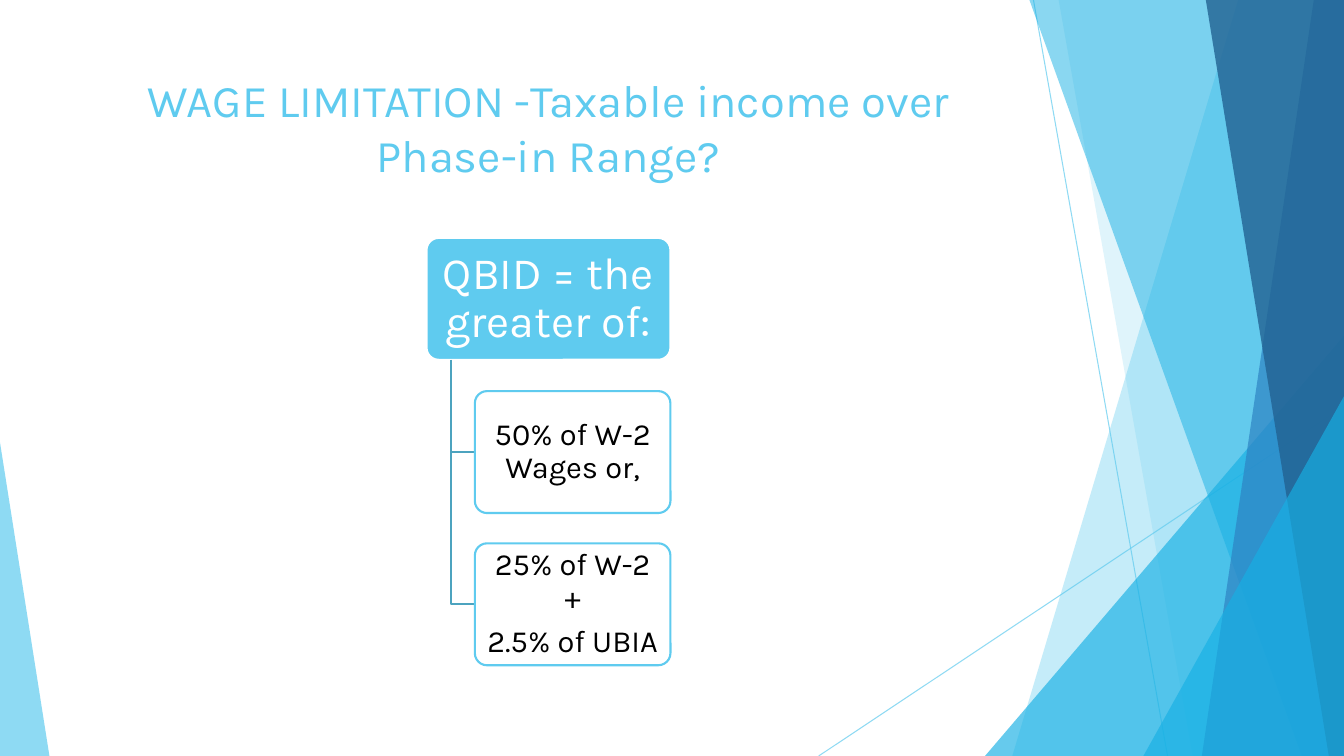
from lxml import etree
from pptx import Presentation
from pptx.dml.color import RGBColor
from pptx.enum.shapes import MSO_CONNECTOR as CONNECTOR, MSO_SHAPE as SHAPE
from pptx.enum.text import MSO_ANCHOR as ANCHOR, PP_ALIGN as ALIGN
from pptx.oxml.ns import qn
from pptx.util import Pt

PX = 9144
WIDTH, HEIGHT = 1333, 750
FONT = "Karla"
WHITE = RGBColor(0xFF, 0xFF, 0xFF)
BLACK = RGBColor(0, 0, 0)
SKY = RGBColor(0x5F, 0xCB, 0xEF)
CYAN = RGBColor(0x17, 0xB0, 0xE4)
BLUE = RGBColor(0x2E, 0x83, 0xC3)
NAVY = RGBColor(0x22, 0x62, 0x92)
TEAL = RGBColor(0x4C, 0xA3, 0xBF)

RAYS = [((1025, 0), (1158, HEIGHT)), ((WIDTH, 403), (812, HEIGHT))]
BANDS_BEHIND = [(1228, 1004, SKY, 36), (1050, 1183, SKY, 20)]
BANDS_FRONT = [(1021, 1291, CYAN, 50), (1303, 1192, BLUE, 70), (1196, 1318, NAVY, 80)]

PARENT_BOX = (423, 236, 242, 121)
CHILD_LEFT, CHILD_TOP, CHILD_STEP = 471, 388, 151
CHILD_WIDTH, CHILD_HEIGHT = 194, 121
TRUNK_X = 447
CHILD_TEXTS = [["50% of W-2 Wages or,"], ["25% of W-2 +", "2.5% of UBIA"]]


def emu(*lengths):
    return [length * PX for length in lengths]


def set_alpha(color_format_owner, percent):
    color = color_format_owner._xPr.find(".//" + qn("a:srgbClr"))
    etree.SubElement(color, qn("a:alpha")).set("val", str(percent * 1000))


def paint(shape, color, percent=100):
    shape.shadow.inherit = False
    shape.fill.solid()
    shape.fill.fore_color.rgb = color
    if percent < 100:
        set_alpha(shape.fill, percent)
    shape.line.fill.background()


def add_ray(slide, start, end):
    ray = slide.shapes.add_connector(CONNECTOR.STRAIGHT, *emu(*start, *end))
    ray.line.color.rgb = SKY
    ray.line.width = Pt(0.75)
    set_alpha(ray.line.fill, 70)
    etree.SubElement(ray._element.spPr, qn("a:effectLst"))


def add_path(slide, points, close):
    builder = slide.shapes.build_freeform(*points[0], scale=PX)
    builder.add_line_segments(points[1:], close=close)
    return builder.convert_to_shape()


def add_band(slide, top_x, bottom_x, color, percent):
    corners = [(top_x, 0), (WIDTH, 0), (WIDTH, HEIGHT), (bottom_x, HEIGHT)]
    paint(add_path(slide, corners, True), color, percent)


def add_triangle(slide, left, top, width, apex, color, percent):
    triangle = slide.shapes.add_shape(
        SHAPE.ISOSCELES_TRIANGLE, *emu(left, top, width, HEIGHT - top))
    triangle.adjustments[0] = apex
    paint(triangle, color, percent)


def add_backdrop(slide):
    for start, end in RAYS:
        add_ray(slide, start, end)
    for band in BANDS_BEHIND:
        add_band(slide, *band)
    add_triangle(slide, 977, 333, 356, 1, CYAN, 66)
    for band in BANDS_FRONT:
        add_band(slide, *band)
    add_triangle(slide, 1134, 393, 199, 1, CYAN, 66)
    add_triangle(slide, 0, 439, 49, 0, SKY, 70)


def write(shape, lines, size, color, spacing=1.0):
    frame = shape.text_frame
    frame.word_wrap = True
    frame.text = "\n".join(lines)
    for index, paragraph in enumerate(frame.paragraphs):
        paragraph.alignment = ALIGN.CENTER
        paragraph.line_spacing = spacing
        if index:
            paragraph.space_before = Pt(size * 0.35)
        for run in paragraph.runs:
            run.font.name = FONT
            run.font.size = Pt(size)
            run.font.color.rgb = color


def add_title(slide, text):
    title = slide.shapes.add_textbox(*emu(74, 67, 940, 76))
    write(title, [text], 32.4, SKY)
    title.text_frame.vertical_anchor = ANCHOR.TOP


def add_box(slide, bounds, lines, size, text_color, fill, percent, outline):
    box = slide.shapes.add_shape(SHAPE.ROUNDED_RECTANGLE, *emu(*bounds))
    box.adjustments[0] = 0.1
    paint(box, fill, percent)
    box.line.color.rgb = outline
    box.line.width = Pt(1.5)
    write(box, lines, size, text_color, 0.9)
    frame = box.text_frame
    frame.margin_left = frame.margin_right = 7 * PX
    frame.margin_top = frame.margin_bottom = 5 * PX
    frame.vertical_anchor = ANCHOR.MIDDLE


def add_branch(slide, start_y, end_y):
    points = [(TRUNK_X, start_y), (TRUNK_X, end_y), (CHILD_LEFT, end_y)]
    branch = add_path(slide, points, False)
    branch.shadow.inherit = False
    branch.fill.background()
    branch.line.color.rgb = TEAL
    branch.line.width = Pt(1.5)


def add_hierarchy(slide):
    add_box(slide, PARENT_BOX, ["QBID = the greater of:"], 32, WHITE, SKY, 100, WHITE)
    parent_bottom = PARENT_BOX[1] + PARENT_BOX[3]
    for index, lines in enumerate(CHILD_TEXTS):
        top = CHILD_TOP + index * CHILD_STEP
        add_branch(slide, parent_bottom, top + CHILD_HEIGHT // 2)
        bounds = (CHILD_LEFT, top, CHILD_WIDTH, CHILD_HEIGHT)
        add_box(slide, bounds, lines, 22, BLACK, WHITE, 90, SKY)


def main():
    presentation = Presentation()
    presentation.slide_width, presentation.slide_height = emu(WIDTH, HEIGHT)
    slide = presentation.slides.add_slide(presentation.slide_layouts[6])
    add_backdrop(slide)
    add_title(slide, "WAGE LIMITATION -Taxable income over Phase-in Range?")
    add_hierarchy(slide)
    presentation.save("out.pptx")


if __name__ == "__main__":
    main()
